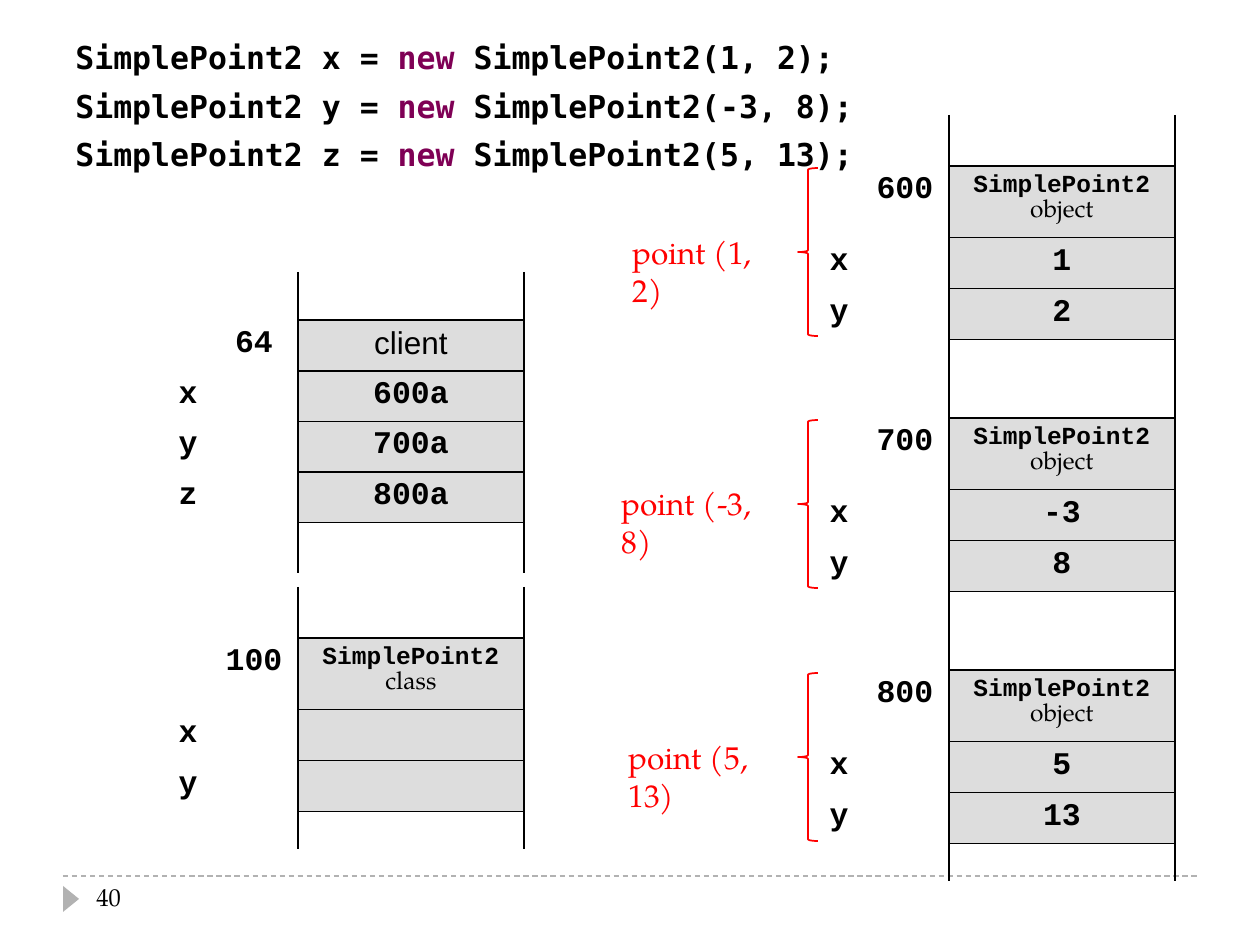
import pptx
import pptx.chart.data
import pptx.dml.color
import pptx.enum.dml
import pptx.enum.shapes
import pptx.enum.text
import pptx.oxml
import pptx.oxml.ns
import pptx.util
import lxml.etree

PX = 914400 // 126
HEX = {"ink": "000000", "cell": "DDDDDD", "key": "7F0055", "red": "FF0000", "rule": "B2B2B2"}
RGB = {name: pptx.dml.color.RGBColor.from_string(code) for name, code in HEX.items()}
MONO, CODE, BOOK = "Courier New", "DejaVu Sans Mono", "TeX Gyre Pagella"
QN = pptx.oxml.ns.qn
ALIGN = pptx.enum.text.PP_ALIGN
SHAPE = pptx.enum.shapes.MSO_SHAPE
PLAIN = "{2D5ABB26-0587-4C30-8999-92F81FD0307C}"


def style(font, face, size=18, bold=False, ink="ink"):
    font.name = face
    font.size = pptx.util.Pt(size)
    font.bold = bold
    font.color.rgb = RGB[ink]


def edge(cell, sides):
    props = cell._tc.get_or_add_tcPr()
    for side in sides:
        line = lxml.etree.SubElement(props, QN("a:ln" + side), w="12700")
        fill = lxml.etree.SubElement(line, QN("a:solidFill"))
        lxml.etree.SubElement(fill, QN("a:srgbClr"), val=HEX["ink"])


deck = pptx.Presentation()
deck.slide_width, deck.slide_height = 1260 * PX, 945 * PX
slide = deck.slides.add_slide(deck.slide_layouts[6])
shapes = slide.shapes

rule = shapes.add_connector(
    pptx.enum.shapes.MSO_CONNECTOR.STRAIGHT, 63 * PX, 876 * PX, 1197 * PX, 876 * PX)
rule.line.color.rgb = RGB["rule"]
rule.line.width = pptx.util.Pt(0.75)
rule.line.dash_style = pptx.enum.dml.MSO_LINE.DASH
lxml.etree.SubElement(rule._element.spPr, QN("a:effectLst"))

mark = shapes.add_shape(SHAPE.ISOSCELES_TRIANGLE, 58 * PX, 891 * PX, 26 * PX, 16 * PX)
mark.rotation = 90
mark.shadow.inherit = False
mark.fill.solid()
mark.fill.fore_color.rgb = RGB["rule"]
mark.line.fill.background()

body = shapes.add_textbox(63 * PX, 32 * PX, 1134 * PX, 816 * PX).text_frame
body.word_wrap = True
for row, (name, args) in enumerate([("x", "1, 2"), ("y", "-3, 8"), ("z", "5, 13")]):
    para = body.paragraphs[0] if row == 0 else body.add_paragraph()
    para.space_before = pptx.util.Pt(6)
    for text, ink in [(f"SimplePoint2 {name} = ", "ink"), ("new", "key"),
                      (f" SimplePoint2({args});", "ink")]:
        run = para.add_run()
        run.text = text
        style(run.font, CODE, 18, True, ink)

CLIENT = [48, 51, 49, 48, 49, 51]
OBJECT = [51, 65, 51, 51, 38]
grids = [
    (63, 272, CLIENT, "64", "client", ["600a", "700a", "800a"]),
    (63, 587, OBJECT, "100", "class", ["", ""]),
    (714, 115, OBJECT, "600", "object", ["1", "2"]),
    (714, 367, OBJECT, "700", "object", ["-3", "8"]),
    (714, 619, OBJECT, "800", "object", ["5", "13"]),
]
for left, top, rows, place, kind, values in grids:
    last = len(rows) - 1
    frame = shapes.add_table(len(rows), 3, left * PX, top * PX, 461 * PX, sum(rows) * PX)
    grid = frame.table
    grid.first_row = grid.horz_banding = False
    grid._tbl.tblPr.find(QN("a:tableStyleId")).text = PLAIN
    for col, width in zip(grid.columns, [147, 88, 226]):
        col.width = width * PX
    for row, height in enumerate(rows):
        grid.rows[row].height = height * PX
        name, addr, slot = grid.rows[row].cells
        edge(addr, "R")
        edge(slot, "LRB" if row == 0 else "LRT" if row == last else "LRTB")
        for cell in (name, addr, slot):
            cell.fill.background()
        if row in (0, last):
            for cell in (name, addr, slot):
                cell.margin_top = cell.margin_bottom = 0
            continue
        slot.fill.solid()
        slot.fill.fore_color.rgb = RGB["cell"]
        texts = [(addr, place)] if row == 1 else [
            (name, "xyz"[row - 2]), (slot, values[row - 2])]
        for cell, text in texts:
            para = cell.text_frame.paragraphs[0]
            para.text = text
            para.alignment = ALIGN.RIGHT if cell is name else ALIGN.CENTER
            style(para.font, MONO, 18, True)
        if row == 1:
            para = slot.text_frame.paragraphs[0]
            para.alignment = ALIGN.CENTER
            parts = [("client", "Arial", 18, False)] if kind == "client" else [
                ("SimplePoint2 ", MONO, 14, True), (kind, BOOK, 14, False)]
            for text, face, size, bold in parts:
                run = para.add_run()
                run.text = text
                style(run.font, face, size, bold)
    if kind == "client":
        grid.cell(2, 1).merge(grid.cell(4, 1))

labels = [
    ("40", 84, 876, 273, 14, "ink"),
    ("point (1, 2)", 620, 227, 178, 18, "red"),
    ("point (-3, 8)", 609, 478, 189, 18, "red"),
    ("point (5, 13)", 616, 732, 185, 18, "red"),
]
for text, left, top, width, size, ink in labels:
    frame = shapes.add_textbox(left * PX, top * PX, width * PX, 50 * PX).text_frame
    frame.word_wrap = True
    para = frame.paragraphs[0]
    para.text = text
    style(para.font, BOOK, size, False, ink)

for top in (168, 420, 673):
    brace = shapes.add_shape(SHAPE.LEFT_BRACE, 798 * PX, top * PX, 20 * PX, 168 * PX)
    brace.shadow.inherit = False
    brace.fill.background()
    brace.line.color.rgb = RGB["red"]
    brace.line.width = pptx.util.Pt(1)

deck.save("out.pptx")
